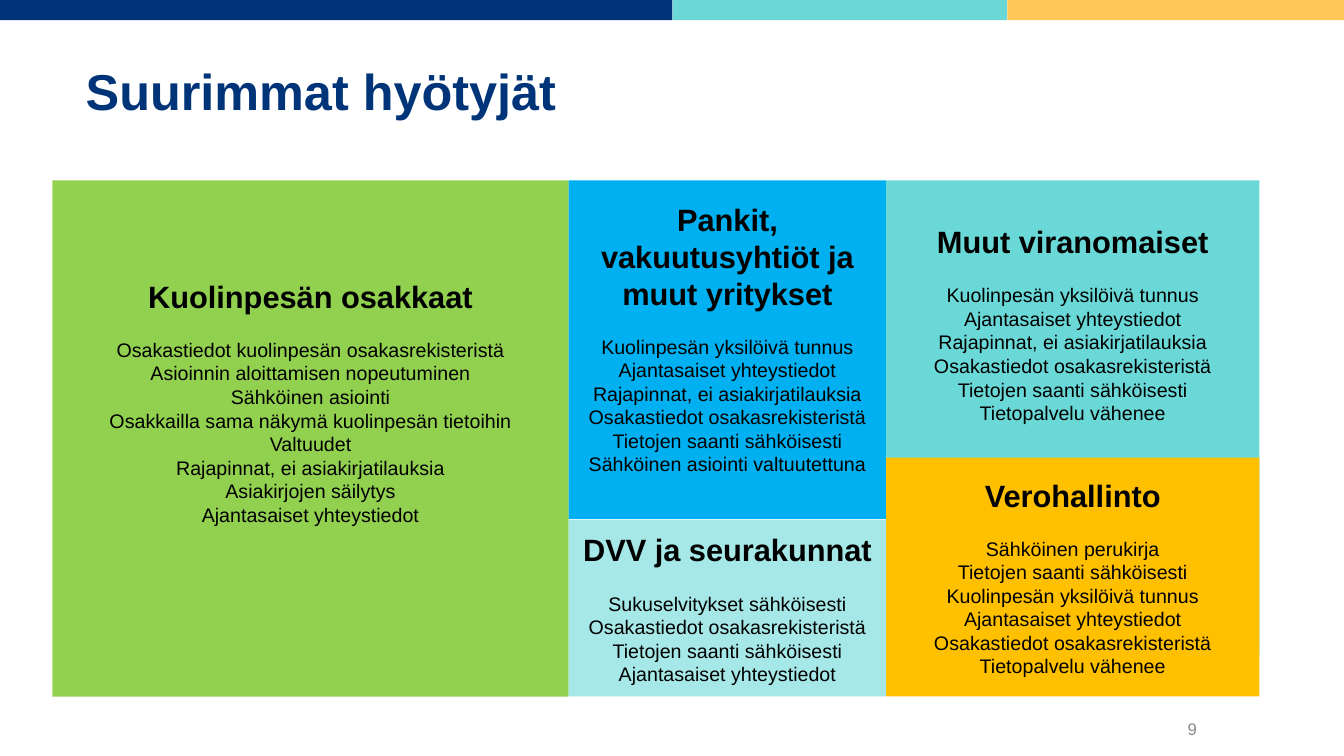
from dataclasses import dataclass

from pptx import Presentation
from pptx.dml.color import RGBColor
from pptx.enum.shapes import MSO_SHAPE
from pptx.enum.text import MSO_ANCHOR, PP_ALIGN
from pptx.util import Inches, Pt

RECTANGLE = MSO_SHAPE.RECTANGLE
TOP, MIDDLE, BOTTOM = MSO_ANCHOR.TOP, MSO_ANCHOR.MIDDLE, MSO_ANCHOR.BOTTOM
LEFT, CENTER, RIGHT = PP_ALIGN.LEFT, PP_ALIGN.CENTER, PP_ALIGN.RIGHT


@dataclass(frozen=True)
class Theme:
    font: str = "Arial"
    navy: str = "003479"
    turquoise: str = "69D8D7"
    pale_turquoise: str = "A5E8E7"
    apricot: str = "FFC658"
    green: str = "92D050"
    blue: str = "00B0F0"
    amber: str = "FFC000"
    black: str = "000000"
    grey: str = "8C8C8C"
    title_size: int = 36
    heading_size: int = 22
    item_size: int = 14
    number_size: int = 12
    line_factor: float = 1.2


THEME = Theme()

BARS = [
    (0, 6.67, THEME.navy),
    (6.67, 3.32, THEME.turquoise),
    (9.99, 3.35, THEME.apricot),
]


@dataclass(frozen=True)
class Card:
    box: tuple
    color: str
    heading: str
    items: list
    anchor: MSO_ANCHOR = MIDDLE
    margin_top: float = 0.05
    margin_bottom: float = 0.05


CARDS = [
    Card((0.52, 1.79, 5.12, 5.12), THEME.green, "Kuolinpesän osakkaat", [
        "Osakastiedot kuolinpesän osakasrekisteristä",
        "Asioinnin aloittamisen nopeutuminen",
        "Sähköinen asiointi",
        "Osakkailla sama näkymä kuolinpesän tietoihin",
        "Valtuudet",
        "Rajapinnat, ei asiakirjatilauksia",
        "Asiakirjojen säilytys",
        "Ajantasaiset yhteystiedot",
    ], margin_bottom=0.78),
    Card((5.64, 1.79, 3.15, 3.36), THEME.blue,
         "Pankit, vakuutusyhtiöt ja muut yritykset", [
        "Kuolinpesän yksilöivä tunnus",
        "Ajantasaiset yhteystiedot",
        "Rajapinnat, ei asiakirjatilauksia",
        "Osakastiedot osakasrekisteristä",
        "Tietojen saanti sähköisesti",
        "Sähköinen asiointi valtuutettuna",
    ], margin_bottom=0.28),
    Card((8.79, 1.79, 3.7, 4.71), THEME.turquoise, "Muut viranomaiset", [
        "Kuolinpesän yksilöivä tunnus",
        "Ajantasaiset yhteystiedot",
        "Rajapinnat, ei asiakirjatilauksia",
        "Osakastiedot osakasrekisteristä",
        "Tietojen saanti sähköisesti",
        "Tietopalvelu vähenee",
    ], anchor=TOP, margin_top=0.42),
    Card((8.79, 4.54, 3.7, 2.37), THEME.amber, "Verohallinto", [
        "Sähköinen perukirja",
        "Tietojen saanti sähköisesti",
        "Kuolinpesän yksilöivä tunnus",
        "Ajantasaiset yhteystiedot",
        "Osakastiedot osakasrekisteristä",
        "Tietopalvelu vähenee",
    ]),
    Card((5.64, 5.16, 3.15, 1.75), THEME.pale_turquoise, "DVV ja seurakunnat", [
        "Sukuselvitykset sähköisesti",
        "Osakastiedot osakasrekisteristä",
        "Tietojen saanti sähköisesti",
        "Ajantasaiset yhteystiedot",
    ]),
]


def write_paragraph(paragraph, text, size, color, bold=False, alignment=CENTER):
    paragraph.text = text
    paragraph.alignment = alignment
    paragraph.line_spacing = Pt(size * THEME.line_factor)
    font = paragraph.font
    font.name = THEME.font
    font.size = Pt(size)
    font.bold = bold
    font.color.rgb = RGBColor.from_string(color)


def add_rectangle(slide, box, color):
    shape = slide.shapes.add_shape(RECTANGLE, *map(Inches, box))
    shape.shadow.inherit = False
    shape.fill.solid()
    shape.fill.fore_color.rgb = RGBColor.from_string(color)
    shape.line.fill.background()
    return shape


def add_card(slide, card):
    frame = add_rectangle(slide, card.box, card.color).text_frame
    frame.word_wrap = True
    frame.vertical_anchor = card.anchor
    frame.margin_top = Inches(card.margin_top)
    frame.margin_bottom = Inches(card.margin_bottom)
    heading = frame.paragraphs[0]
    write_paragraph(heading, card.heading, THEME.heading_size, THEME.black, bold=True)
    heading.space_after = Pt(THEME.item_size * THEME.line_factor)
    for item in card.items:
        write_paragraph(frame.add_paragraph(), item, THEME.item_size, THEME.black)


def set_title(slide, text):
    title = slide.shapes.title
    title.left, title.top, title.width, title.height = map(Inches, (0.75, 0.16, 11.22, 1.09))
    title.text_frame.vertical_anchor = BOTTOM
    write_paragraph(title.text_frame.paragraphs[0], text, THEME.title_size,
                    THEME.navy, bold=True, alignment=LEFT)


def add_page_number(slide, text):
    frame = slide.shapes.add_textbox(*map(Inches, (11.06, 7.11, 0.91, 0.24))).text_frame
    frame.word_wrap = True
    frame.vertical_anchor = MIDDLE
    write_paragraph(frame.paragraphs[0], text, THEME.number_size, THEME.grey, alignment=RIGHT)


def main():
    presentation = Presentation()
    presentation.slide_width = Inches(13.33)
    presentation.slide_height = Inches(7.5)
    slide = presentation.slides.add_slide(presentation.slide_layouts.get_by_name("Title Only"))
    for left, width, color in BARS:
        add_rectangle(slide, (left, 0, width, 0.2), color)
    set_title(slide, "Suurimmat hyötyjät")
    for card in CARDS:
        add_card(slide, card)
    add_page_number(slide, "9")
    presentation.save("out.pptx")


if __name__ == "__main__":
    main()
